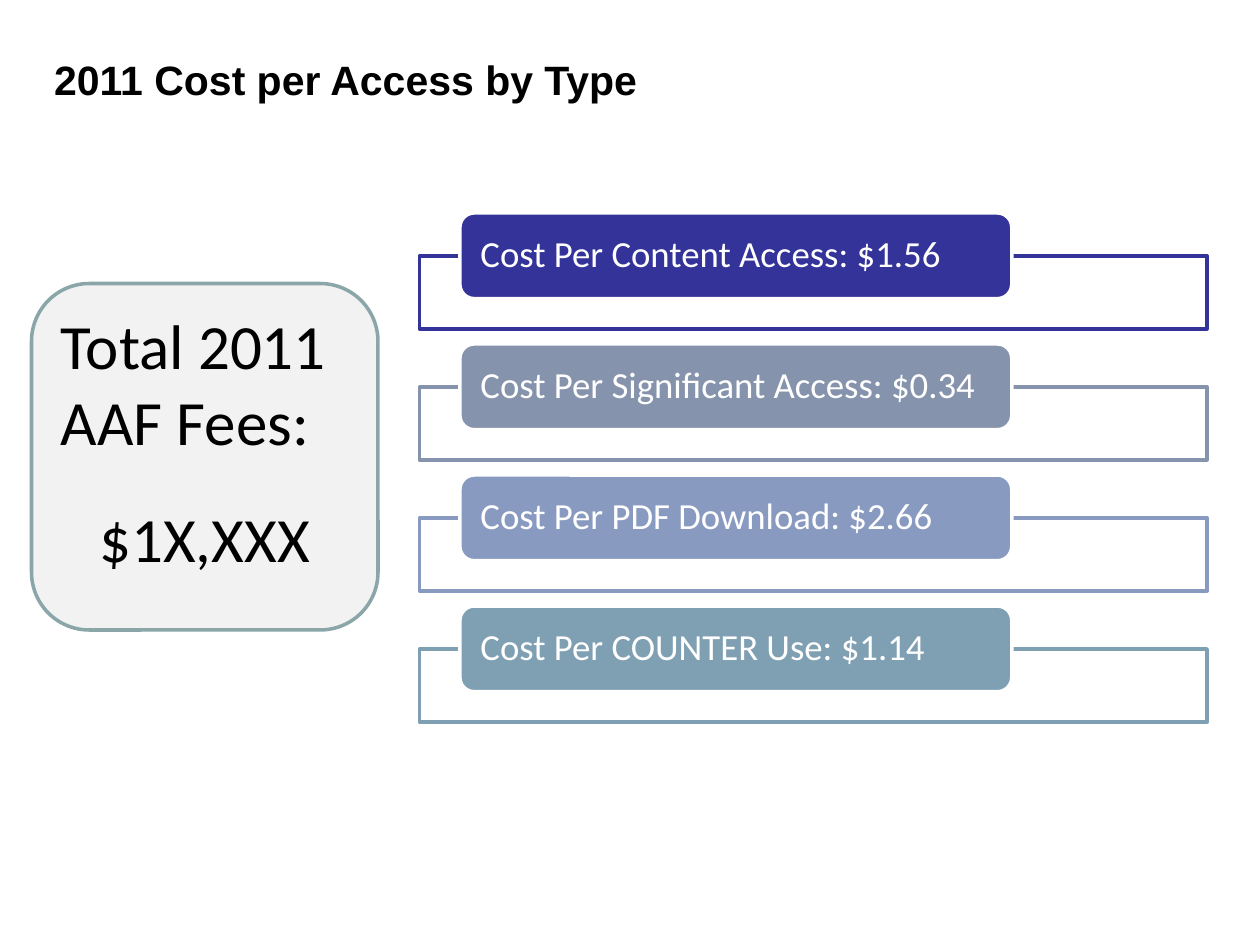
from pptx import Presentation
from pptx.dml.color import RGBColor
from pptx.enum import shapes, text
from pptx.util import Inches, Pt

# Content
TITLE = "2011 Cost per Access by Type"
FEES = ["Total 2011 AAF Fees:", "$1X,XXX"]
COSTS = [
    ("Cost Per Content Access: $1.56", "333399"),
    ("Cost Per Significant Access: $0.34", "8693AC"),
    ("Cost Per PDF Download: $2.66", "899AC1"),
    ("Cost Per COUNTER Use: $1.14", "7F9FB3"),
]
TOP, STEP = 1.69, 1.04
KIND = shapes.MSO_SHAPE
ALIGN = text.PP_ALIGN


def color(code):
    return RGBColor.from_string(code)


def write(frame, words, first=True, size=21, font="Calibri", ink="000000",
          bold=False, align=ALIGN.LEFT, before=0, line=None):
    para = frame.paragraphs[0] if first else frame.add_paragraph()
    para.alignment = align
    para.space_before = Pt(before)
    para.line_spacing = line
    run = para.add_run()
    run.text = words
    run.font.name, run.font.size, run.font.bold = font, Pt(size), bold
    run.font.color.rgb = color(ink)


def draw(kind, left, top, width, height, fill, edge):
    box = slide.shapes.add_shape(kind, *map(Inches, (left, top, width, height)))
    box.shadow.inherit = False
    box.fill.solid()
    box.fill.fore_color.rgb = color(fill)
    box.line.color.rgb = color(edge)
    box.line.width = Pt(2)
    box.text_frame.word_wrap = True
    return box


deck = Presentation()
deck.slide_width, deck.slide_height = Inches(10), Inches(7.5)
slide = deck.slides.add_slide(deck.slide_layouts[5])

# Title
title = slide.shapes.title
title.left, title.top = Inches(0.33), Inches(0.25)
title.width, title.height = Inches(7.5), Inches(0.75)
title.text_frame.vertical_anchor = text.MSO_ANCHOR.MIDDLE
write(title.text_frame, TITLE, size=23.4, font="Arial", bold=True)

# Total fees
fees = draw(KIND.ROUNDED_RECTANGLE, 0.25, 2.25, 2.75, 2.75, "F2F2F2", "8AA6A8")
fees.text_frame.vertical_anchor = text.MSO_ANCHOR.TOP
write(fees.text_frame, FEES[0], size=36)
write(fees.text_frame, FEES[1], first=False, size=36, align=ALIGN.CENTER, before=24)

# Cost rows: an open frame with a label over its top edge
for row, (words, hue) in enumerate(COSTS):
    top = TOP + row * STEP
    draw(KIND.RECTANGLE, 3.33, top + 0.34, 6.25, 0.58, "FFFFFF", hue)
    label = draw(KIND.ROUNDED_RECTANGLE, 3.65, top, 4.38, 0.68, hue, "FFFFFF")
    frame = label.text_frame
    frame.vertical_anchor = text.MSO_ANCHOR.MIDDLE
    frame.margin_left = frame.margin_right = Inches(0.13)
    frame.margin_top = frame.margin_bottom = 0
    write(frame, words, ink="FFFFFF", line=0.9)

deck.save("out.pptx")
